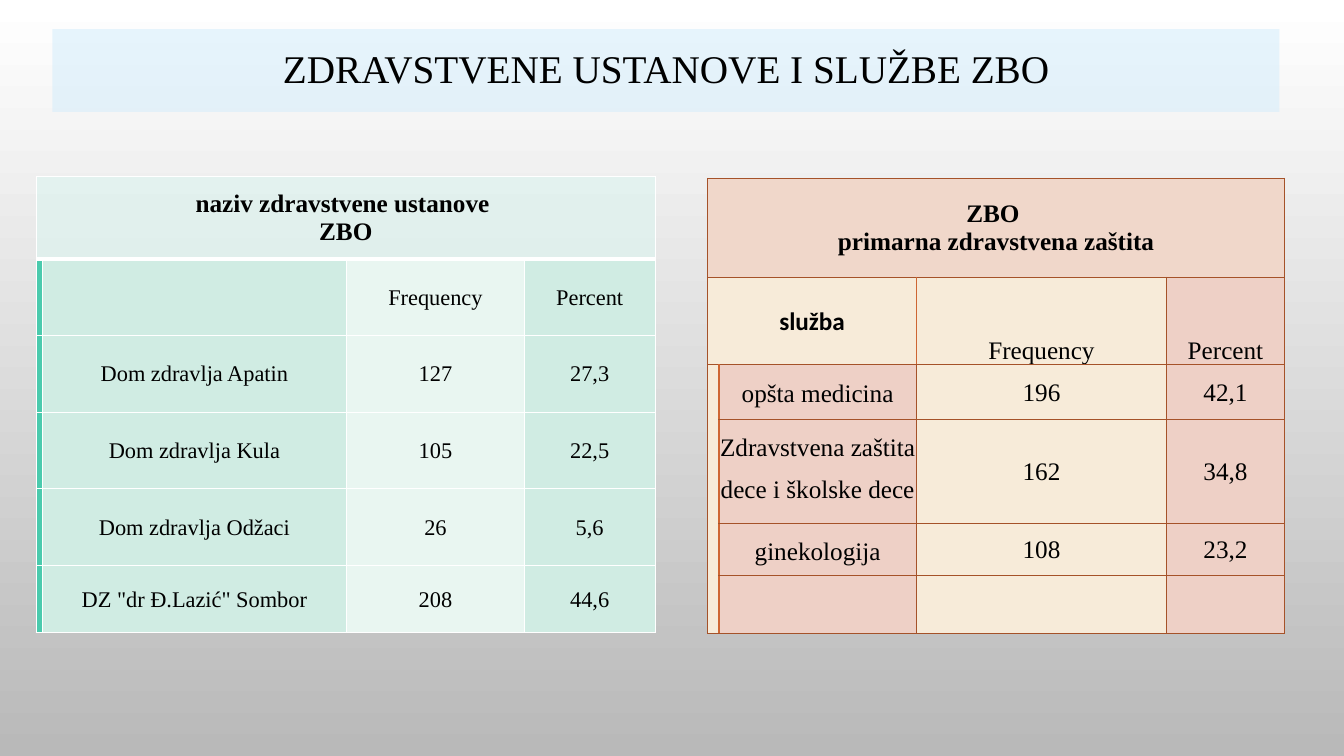
import pptx
import pptx.util
import pptx.dml.color
import pptx.enum.text
import pptx.oxml
import pptx.oxml.ns

Inches, Pt = pptx.util.Inches, pptx.util.Pt
RGBColor = pptx.dml.color.RGBColor
ALIGN = pptx.enum.text.PP_ALIGN
ANCHOR = pptx.enum.text.MSO_ANCHOR
qn = pptx.oxml.ns.qn

BLACK = RGBColor(0x00, 0x00, 0x00)
WHITE = RGBColor(0xFF, 0xFF, 0xFF)
GRAY = RGBColor(0xB9, 0xB9, 0xB9)
SKY = RGBColor(0xD5, 0xED, 0xFC)
MINT = RGBColor(0xDB, 0xF4, 0xEF)
TEAL = RGBColor(0x4B, 0xCA, 0xAD)
GREEN = RGBColor(0xD0, 0xEC, 0xE3)
PALE_GREEN = RGBColor(0xE9, 0xF6, 0xF1)
CREAM = RGBColor(0xF7, 0xEB, 0xD9)
PEACH = RGBColor(0xF0, 0xD7, 0xCA)
PINK = RGBColor(0xEE, 0xD0, 0xC6)
BROWN = RGBColor(0xA5, 0x52, 0x29)
ORANGE = RGBColor(0xCE, 0x66, 0x33)

SERIF = "Times New Roman"
TITLE = "ZDRAVSTVENE USTANOVE I SLUŽBE ZBO"

INSTITUTIONS = {
    "at": (0.36, 1.75),
    "columns": [0.05, 3.02, 1.76, 1.3],
    "rows": [0.82, 0.76, 0.76, 0.76, 0.76, 0.67],
    "merges": [((0, 0), (0, 3))],
    "header_fill": MINT,
    "column_fills": [TEAL, GREEN, PALE_GREEN, GREEN],
    "border": (WHITE, 1),
    "edges": {(0, column): {"B": (WHITE, 3)} for column in range(4)},
    "size": 16,
    "cells": [
        ["naziv zdravstvene ustanove \nZBO", "", "", ""],
        ["", "", "Frequency", "Percent"],
        ["", "Dom zdravlja Apatin", "127", "27,3"],
        ["", "Dom zdravlja Kula", "105", "22,5"],
        ["", "Dom zdravlja Odžaci", "26", "5,6"],
        ["", 'DZ "dr Đ.Lazić" Sombor', "208", "44,6"],
    ],
}

SERVICES = {
    "at": (7.02, 1.77),
    "columns": [0.11, 1.96, 2.48, 1.17],
    "rows": [0.98, 0.87, 0.54, 1.03, 0.52, 0.58],
    "merges": [((0, 0), (0, 3)), ((1, 0), (1, 1)), ((2, 0), (5, 0))],
    "header_fill": PEACH,
    "column_fills": [CREAM, PINK, CREAM, PINK],
    "border": (BROWN, 0.75),
    "edges": {(row, 0): {"R": (ORANGE, 1.25)} for row in range(1, 6)},
    "size": 18,
    "cells": [
        ["ZBO \nprimarna zdravstvena zaštita", "", "", ""],
        ["služba", "", "Frequency", "Percent"],
        ["", "opšta medicina", "196", "42,1"],
        ["", "Zdravstvena zaštita dece i školske dece", "162", "34,8"],
        ["", "ginekologija", "108", "23,2"],
        ["", "", "", ""],
    ],
}


def apply(target, values):
    for name, value in values.items():
        setattr(target, name, value)


def write(frame, text, size, bold=False, font=SERIF, spacing=1.0):
    for index, line in enumerate(text.split("\n")):
        para = frame.paragraphs[0] if index == 0 else frame.add_paragraph()
        apply(para, {"alignment": ALIGN.CENTER, "line_spacing": spacing})
        if line:
            span = para.add_run()
            span.text = line
            apply(span.font, {"name": font, "size": Pt(size), "bold": bold})
            span.font.color.rgb = BLACK


def paint(fill, color, opacity=100):
    fill.solid()
    fill.fore_color.rgb = color
    if opacity < 100:
        tint = fill._xPr.find(qn("a:solidFill"))[0]
        alpha = pptx.oxml.parse_xml(
            f'<a:alpha {pptx.oxml.ns.nsdecls("a")} val="{opacity * 1000}"/>')
        tint.append(alpha)


def draw_borders(cell, borders):
    properties = cell._tc.get_or_add_tcPr()
    for side in "LRTB":
        color, width = borders[side]
        properties.append(pptx.oxml.parse_xml(
            f'<a:ln{side} {pptx.oxml.ns.nsdecls("a")} w="{Pt(width)}">'
            f'<a:solidFill><a:srgbClr val="{color}"/></a:solidFill></a:ln{side}>'))


def add_data_table(page, data):
    left, top = data["at"]
    columns, rows = data["columns"], data["rows"]
    table = page.shapes.add_table(
        len(rows), len(columns), Inches(left), Inches(top),
        Inches(sum(columns)), Inches(sum(rows))).table
    apply(table, {"first_row": False, "horz_banding": False})
    for column, width in zip(table.columns, columns):
        column.width = Inches(width)
    for row, height in zip(table.rows, rows):
        row.height = Inches(height)
    for start, end in data["merges"]:
        table.cell(*start).merge(table.cell(*end))

    for r, texts in enumerate(data["cells"]):
        for c, text in enumerate(texts):
            cell = table.cell(r, c)
            borders = dict.fromkeys("LRTB", data["border"])
            borders.update(data["edges"].get((r, c), {}))
            draw_borders(cell, borders)
            if r == 0:
                paint(cell.fill, data["header_fill"], 60 if data is INSTITUTIONS else 100)
            else:
                paint(cell.fill, data["column_fills"][c])
            service_label = data is SERVICES and r > 1 and c == 1
            service_head = data is SERVICES and r == 1 and c > 1
            anchor = ANCHOR.MIDDLE
            if service_label:
                anchor = ANCHOR.TOP
            elif service_head:
                anchor = ANCHOR.BOTTOM
            apply(cell, {
                "margin_left": Inches(0.01), "margin_right": Inches(0.01),
                "margin_top": Inches(0.01), "margin_bottom": 0,
                "vertical_anchor": anchor})
            write(cell.text_frame, text,
                  size=18 if r == 0 else data["size"],
                  bold=r == 0 or text == "služba",
                  font="Calibri" if text == "služba" else SERIF,
                  spacing=1.5 if service_label else 1.0)


def main():
    deck = pptx.Presentation()
    apply(deck, {"slide_width": Inches(13.33), "slide_height": Inches(7.5)})
    page = deck.slides.add_slide(deck.slide_layouts[5])

    backdrop = page.background.fill
    backdrop.gradient()
    backdrop.gradient_angle = 270
    for stop, color, position in zip(backdrop.gradient_stops, (WHITE, GRAY), (0, 1)):
        stop.color.rgb = color
        stop.position = position

    title = page.shapes.title
    apply(title, {"left": Inches(0.52), "top": Inches(0.29),
                  "width": Inches(12.17), "height": Inches(0.82)})
    paint(title.fill, SKY, 56)
    title.text_frame.vertical_anchor = ANCHOR.MIDDLE
    write(title.text_frame, TITLE, 28, spacing=0.9)

    for data in (INSTITUTIONS, SERVICES):
        add_data_table(page, data)
    deck.save("out.pptx")


if __name__ == "__main__":
    main()
